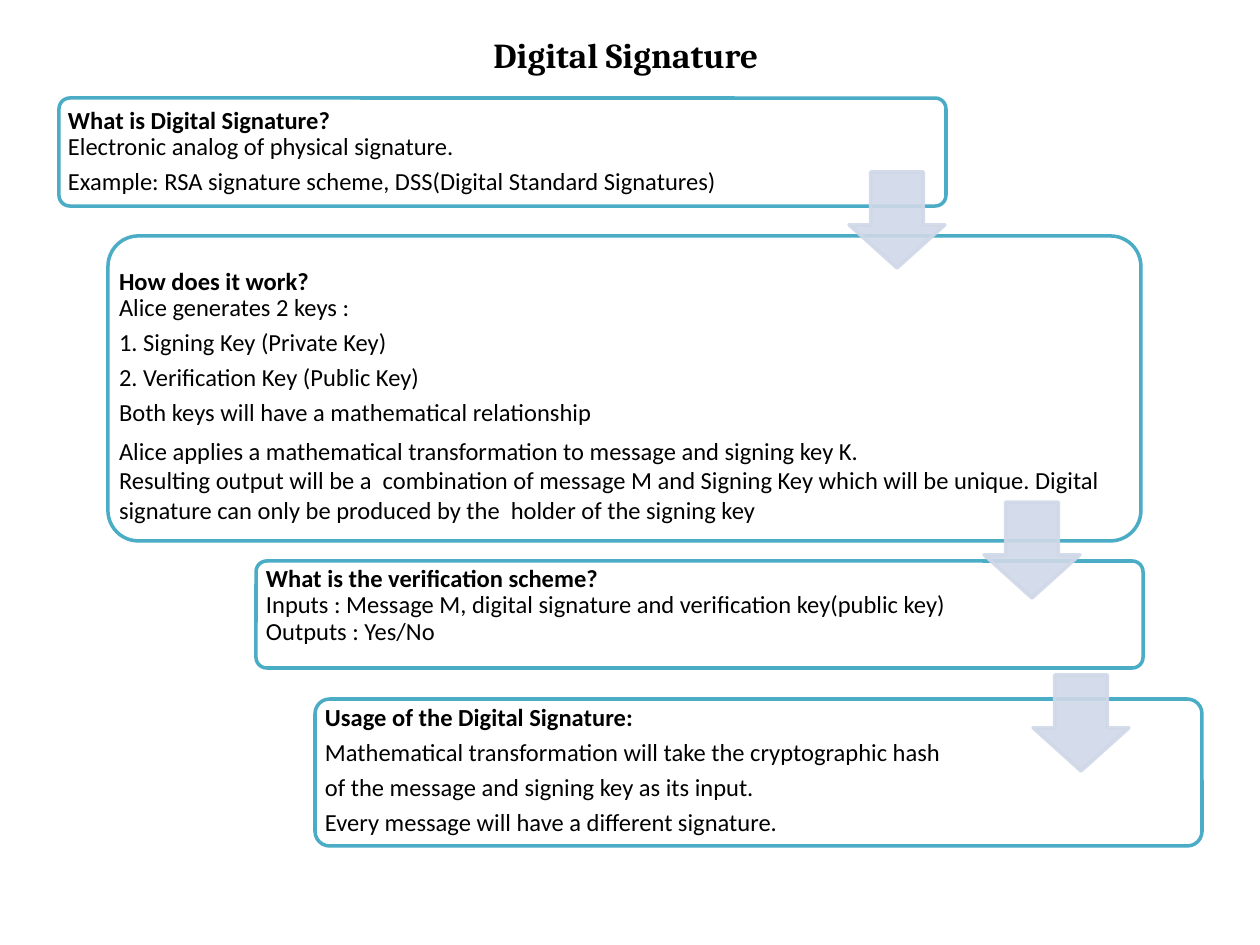
from lxml.etree import SubElement
from pptx import Presentation
from pptx.dml.color import RGBColor
from pptx.enum.shapes import MSO_SHAPE
from pptx.enum.text import MSO_ANCHOR, PP_ALIGN
from pptx.oxml.ns import qn
from pptx.util import Pt

EMU_PER_PX = 914400 / 126
BLACK = RGBColor(0x00, 0x00, 0x00)
WHITE = RGBColor(0xFF, 0xFF, 0xFF)
TEAL = RGBColor(0x4B, 0xAC, 0xC6)
PALE_BLUE = RGBColor(0xD0, 0xD8, 0xE8)

TIGHT = {"line_spacing": 0.9, "space_after": Pt(4.9)}
PLAIN = {"line_spacing": 1.0, "space_after": Pt(0)}

PANELS = [
    ((59, 98, 887, 108), (3, 4, 883), [
        (TIGHT, ["What is Digital Signature?", "Electronic analog of physical signature."]),
        (TIGHT, ["Example: RSA signature scheme, DSS(Digital Standard Signatures)"]),
    ]),
    ((108, 236, 1033, 305), (5, 27, 999), [
        (TIGHT, ["How does it work?", "Alice generates 2 keys :"]),
        (TIGHT, ["1. Signing Key (Private Key)"]),
        (TIGHT, ["2. Verification Key (Public Key)"]),
        (TIGHT, ["Both keys will have a mathematical relationship"]),
        (PLAIN, ["Alice applies a mathematical transformation to message and signing key K."]),
        (PLAIN, ["Resulting output will be a  combination of message M and Signing Key "
                 "which will be unique. Digital signature can only be produced by the  "
                 "holder of the signing key"]),
    ]),
    ((256, 561, 887, 107), (4, -1, 718), [
        (TIGHT, ["What is the verification scheme?",
                 "Inputs : Message M, digital signature and verification key(public key) ",
                 "Outputs : Yes/No"]),
    ]),
    ((315, 699, 887, 147), (4, 0, 717), [
        (TIGHT, ["Usage of the Digital Signature:"]),
        (TIGHT, ["Mathematical transformation will take the cryptographic hash"]),
        (TIGHT, ["of the message and signing key as its input."]),
        (TIGHT, ["Every message will have a different signature."]),
    ]),
]
ARROW_SIZE = 96
ARROW_CORNERS = [(849, 172), (984, 502), (1033, 675)]


def px(length):
    """Turn a length in px into EMU."""
    return round(length * EMU_PER_PX)


def add_run(paragraph, text, font_name, size, bold):
    """Append one black run to a paragraph."""
    run = paragraph.add_run()
    run.text = text
    run.font.name = font_name
    run.font.size = Pt(size)
    run.font.bold = bold
    run.font.color.rgb = BLACK


def add_text_frame(slide, box, inset, anchor):
    """Add a wrapping text box and return its text frame."""
    frame = slide.shapes.add_textbox(*map(px, box)).text_frame
    frame.word_wrap = True
    frame.vertical_anchor = anchor
    frame.margin_left = frame.margin_right = px(inset)
    frame.margin_top = frame.margin_bottom = px(inset)
    return frame


def add_filled_shape(slide, kind, box, adjustments, fill, line):
    """Add a shadowless preset shape with a fill and a 2 pt outline."""
    shape = slide.shapes.add_shape(kind, *map(px, box))
    shape.shadow.inherit = False
    for index, value in enumerate(adjustments):
        shape.adjustments[index] = value
    shape.fill.solid()
    shape.fill.fore_color.rgb = fill
    shape.line.color.rgb = line
    shape.line.width = Pt(2)
    return shape


def add_title(slide, box):
    """Add the centred slide title."""
    frame = add_text_frame(slide, box, 6, MSO_ANCHOR.MIDDLE)
    paragraph = frame.paragraphs[0]
    paragraph.alignment = PP_ALIGN.CENTER
    add_run(paragraph, "Digital Signature", "Cambria", 20, True)


def add_panel(slide, box, text_place, paragraphs):
    """Add a rounded panel whose first line of text is a bold heading."""
    add_filled_shape(slide, MSO_SHAPE.ROUNDED_RECTANGLE, box, [0.1], WHITE, TEAL)
    left, top, width, height = box
    text_left, text_top, text_width = text_place
    text_box = (left + text_left, top + text_top, text_width, height - text_top)
    frame = add_text_frame(slide, text_box, 6, MSO_ANCHOR.TOP)
    for number, (spacing, lines) in enumerate(paragraphs):
        paragraph = frame.add_paragraph() if number else frame.paragraphs[0]
        paragraph.line_spacing = spacing["line_spacing"]
        paragraph.space_after = spacing["space_after"]
        for position, line in enumerate(lines):
            if position:
                paragraph.add_line_break()
            add_run(paragraph, line, "Calibri", 14, number == position == 0)


def add_arrow(slide, box):
    """Add a slightly transparent arrow pointing to the next panel."""
    arrow = add_filled_shape(
        slide, MSO_SHAPE.DOWN_ARROW, box, [0.55, 0.45], PALE_BLUE, PALE_BLUE)
    for color in arrow.element.spPr.iter(qn("a:srgbClr")):
        SubElement(color, qn("a:alpha"), val="90000")


def main():
    """Build and save the presentation."""
    presentation = Presentation()
    presentation.slide_width = px(1260)
    presentation.slide_height = px(945)
    slide = presentation.slides.add_slide(presentation.slide_layouts[6])
    for panel in PANELS:
        add_panel(slide, *panel)
    for left, top in ARROW_CORNERS:
        add_arrow(slide, (left, top, ARROW_SIZE, ARROW_SIZE))
    add_title(slide, (59, 29, 1134, 50))
    presentation.save("out.pptx")


if __name__ == "__main__":
    main()
